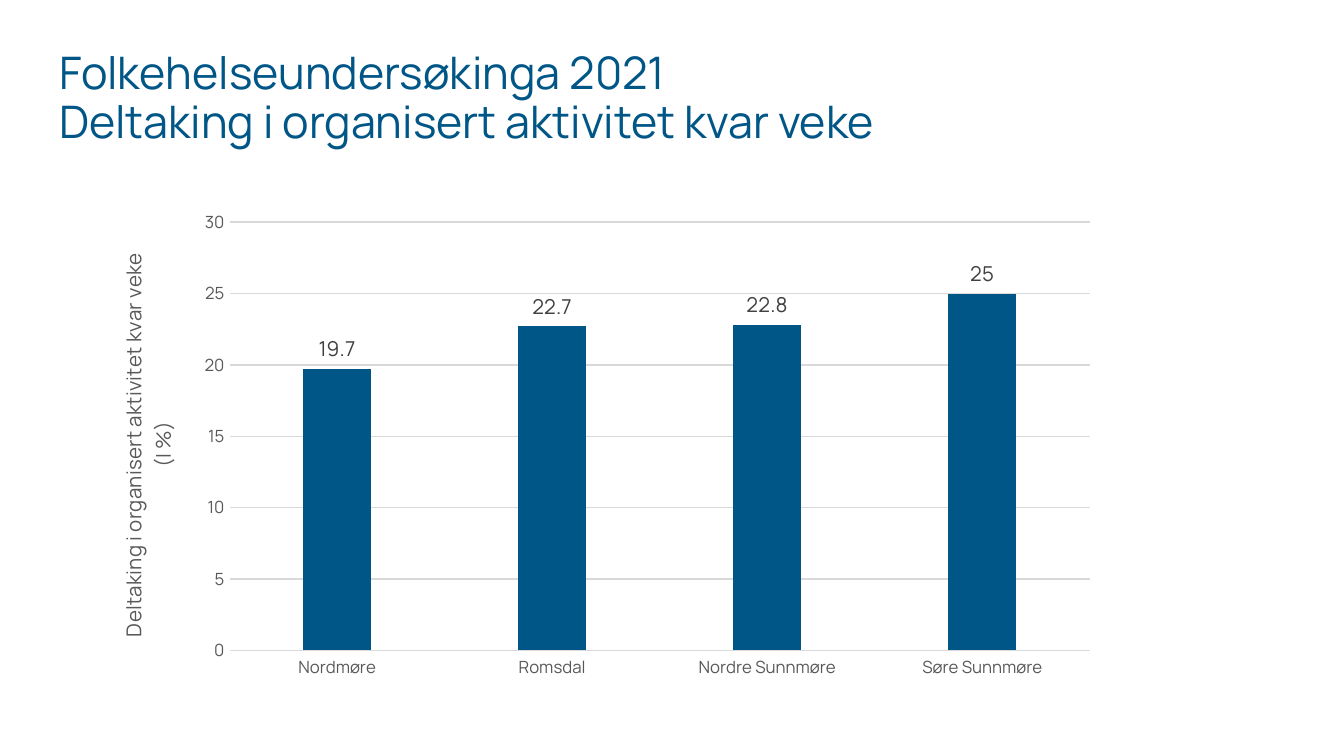
from lxml import etree
from pptx import Presentation
from pptx import util as u
from pptx.chart.data import CategoryChartData
from pptx.dml.color import RGBColor
from pptx.enum import chart as ch
from pptx.enum import text
from pptx.oxml.ns import qn

Pt = u.Pt
BLUE = RGBColor(0x00, 0x56, 0x86)
GREY = RGBColor(0x59, 0x59, 0x59)
DARK = RGBColor(0x40, 0x40, 0x40)
RULE = RGBColor(0xD9, 0xD9, 0xD9)
BLACK = RGBColor(0, 0, 0)


def style(font, size, color):
    for key, value in {"name": "Manrope", "size": Pt(size), "bold": False}.items():
        setattr(font, key, value)
    font.color.rgb = color


prs = Presentation()
prs.slide_width, prs.slide_height = Pt(720), Pt(405)
slide = prs.slides.add_slide(prs.slide_layouts[5])

# Heading
heading = slide.shapes.title
for key, value in {"left": 28.8, "top": 25.9, "width": 662.4, "height": 57.6}.items():
    setattr(heading, key, Pt(value))
frame = heading.text_frame
for key, value in {
    "margin_left": Pt(2.9), "margin_right": Pt(2.9),
    "margin_top": Pt(1.4), "margin_bottom": Pt(1.4),
    "word_wrap": True, "auto_size": text.MSO_AUTO_SIZE.NONE,
    "vertical_anchor": text.MSO_ANCHOR.TOP,
}.items():
    setattr(frame, key, value)
frame.text = "Folkehelseundersøkinga 2021\vDeltaking i organisert aktivitet kvar veke"
lines = frame.paragraphs[0]
lines.alignment = text.PP_ALIGN.LEFT
lines.line_spacing = 0.9
for run in lines.runs:
    style(run.font, 24, BLUE)

# Participation by region
participation = CategoryChartData()
participation.categories = ["Nordmøre", "Romsdal", "Nordre Sunnmøre", "Søre Sunnmøre"]
participation.add_series("Series 1", [19.7, 22.7, 22.8, 25])
chart = slide.shapes.add_chart(
    ch.XL_CHART_TYPE.COLUMN_CLUSTERED,
    Pt(51.8), Pt(101.5), Pt(547.9), Pt(270), participation,
).chart
chart.has_legend = False
chart.has_title = False
style(chart.font, 10, BLACK)

# Columns and their values
columns = chart.plots[0]
for key, value in {"gap_width": 219, "overlap": -27, "vary_by_categories": False}.items():
    setattr(columns, key, value)
share = columns.series[0]
share.format.fill.solid()
share.format.fill.fore_color.rgb = BLUE
labels = share.data_labels
labels.show_value = True
labels.position = ch.XL_LABEL_POSITION.OUTSIDE_END
style(labels.font, 11, DARK)

# Axes
regions, percent = chart.category_axis, chart.value_axis
for axis in (regions, percent):
    axis.major_tick_mark = axis.minor_tick_mark = ch.XL_TICK_MARK.NONE
    style(axis.tick_labels.font, 9, GREY)
for key, value in {"minimum_scale": 0, "maximum_scale": 30, "major_unit": 5}.items():
    setattr(percent, key, value)
percent.format.line.fill.background()
for rule in (regions.format.line, percent.major_gridlines.format.line):
    rule.color.rgb = RULE
    rule.width = Pt(0.75)

# Value axis title
unit = percent.axis_title.text_frame
unit.text = "Deltaking i organisert aktivitet kvar veke (I %)"
style(unit.paragraphs[0].runs[0].font, 11, GREY)
unit_body = percent.axis_title._element.find(".//" + qn("a:bodyPr"))
unit_body.set("rot", "-5400000")
unit_body.set("vert", "horz")

# Fixed inner plot area
plot_area = columns._element.getparent()
layout = plot_area.find(qn("c:layout"))
if layout is None:
    layout = etree.Element(qn("c:layout"))
    plot_area.insert(0, layout)
manual = etree.SubElement(layout, qn("c:manualLayout"))
for tag, value in {
    "layoutTarget": "inner", "xMode": "edge", "yMode": "edge",
    "x": 0.13, "y": 0.065, "w": 0.841, "h": 0.85,
}.items():
    etree.SubElement(manual, qn("c:" + tag)).set("val", str(value))

prs.save("out.pptx")
